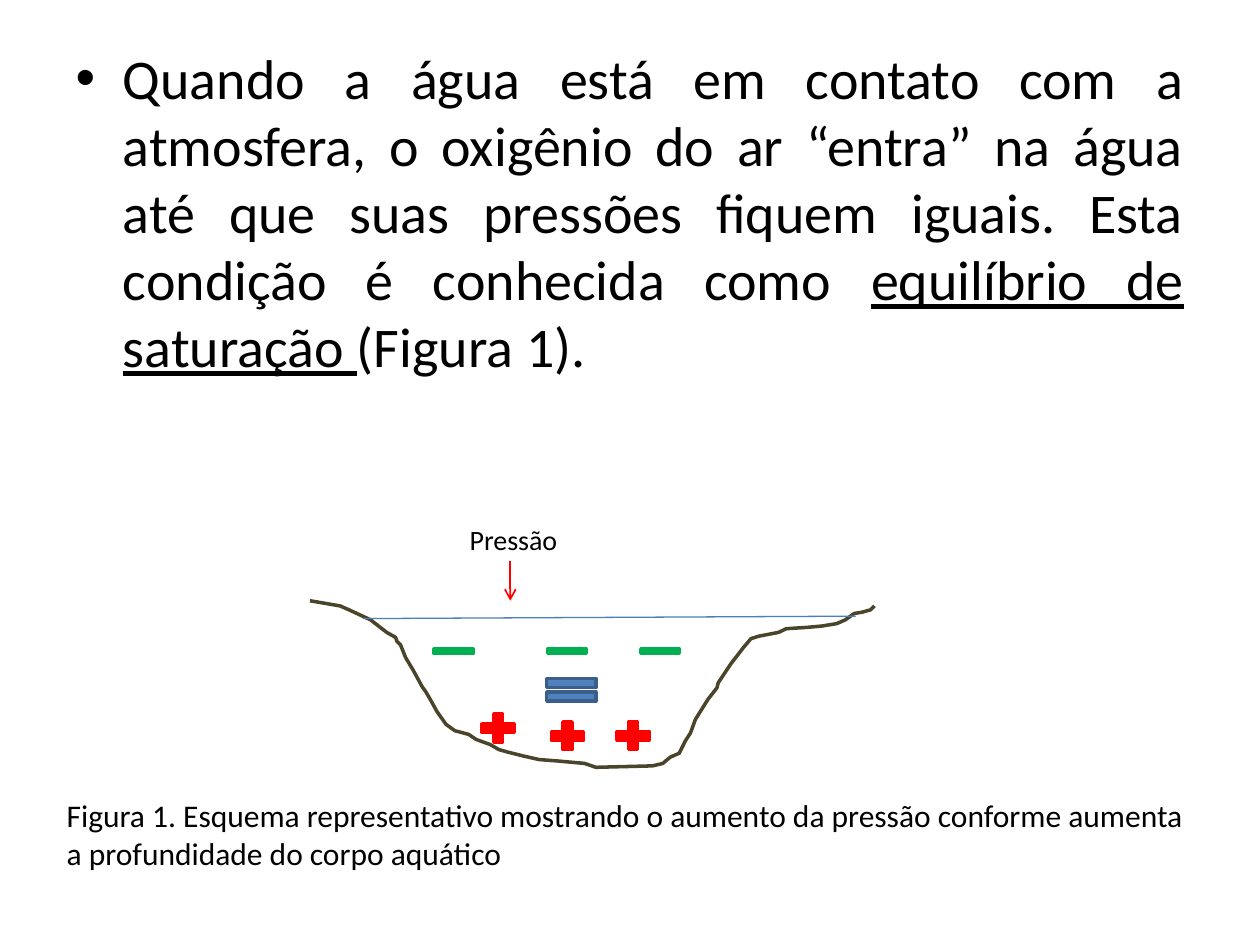
from lxml import etree
from pptx import Presentation
from pptx.dml.color import RGBColor
from pptx.enum import shapes, text
from pptx.oxml import ns
from pptx.util import Pt

BLACK = RGBColor(0x00, 0x00, 0x00)
EARTH = RGBColor(0x4A, 0x45, 0x2A)
WATER = RGBColor(0x4B, 0x7E, 0xBC)
BLUE = RGBColor(0x4F, 0x81, 0xBD)
DARK_BLUE = RGBColor(0x3A, 0x5F, 0x8C)
GREEN = RGBColor(0x00, 0xB0, 0x50)
RED = RGBColor(0xFF, 0x00, 0x00)
FONT = "Calibri"

STATEMENT = [
    ("Quando a água está em contato com a atmosfera, o oxigênio do ar “entra” na água "
     "até que suas pressões fiquem iguais. Esta condição é conhecida como ", False),
    ("equilíbrio de saturação ", True),
    ("(Figura 1).", False),
]
CAPTION = ("Figura 1. Esquema representativo mostrando o aumento da pressão "
           "conforme aumenta a profundidade do corpo aquático")

LAKE_BED = [
    (0, 51), (17.3, 54), (23, 56.5), (34.6, 61.9), (43.9, 69.1), (49, 72), (49.7, 74.2),
    (51.8, 76.3), (54.7, 83.5), (59, 90.7), (64.1, 100.1), (66.2, 103), (69.1, 108),
    (72.7, 114.5), (77.8, 121.7), (82.8, 125.3), (90.7, 127.4), (95, 130.3),
    (103, 133.2), (108, 136.1), (113, 137.5), (121.7, 139.7), (131, 141.8),
    (141.8, 142.6), (157, 144), (163.4, 146.2), (195.8, 145.4), (201.6, 144),
    (205.9, 140.4), (211, 138.2), (214.6, 131), (217.4, 126.7), (220.3, 118.8),
    (227.5, 107.3), (232.6, 100.8), (233.3, 97.9), (240.5, 87.1), (247.7, 77.8),
    (252, 72.7), (256.3, 71.3), (267.8, 69.1), (272.2, 67), (284.4, 66.2),
    (292.3, 65.5), (301, 64.1), (306, 61.9), (311, 58.3), (315.4, 57.6),
    (320.4, 56.2), (322.6, 54),
]
MINUS, EQUAL, PLUS = (shapes.MSO_SHAPE.MATH_MINUS, shapes.MSO_SHAPE.MATH_EQUAL,
                      shapes.MSO_SHAPE.MATH_PLUS)
SIGNS = [
    (EQUAL, (38.2, 22.3), BLUE, DARK_BLUE, [(130.3, 90.7)]),
    (MINUS, (30.2, 11.5), GREEN, GREEN, [(67, 74.2), (131.8, 74.2), (185, 74.2)]),
    (PLUS, (25.2, 21.6), RED, RED, [(95, 113), (134.6, 117.4), (172, 117.4)]),
]


def format_font(paragraph, size):
    """Apply the slide's typeface and colour to a paragraph."""
    paragraph.font.name = FONT
    paragraph.font.size = Pt(size)
    paragraph.font.color.rgb = BLACK


def add_statement(slide, left, top, width, height):
    """Fill the body placeholder with the justified bullet."""
    body = slide.placeholders[1]
    body.left, body.top, body.width, body.height = map(Pt, (left, top, width, height))
    paragraph = body.text_frame.paragraphs[0]
    paragraph.alignment = text.PP_ALIGN.JUSTIFY
    format_font(paragraph, 32)
    for words, underlined in STATEMENT:
        run = paragraph.add_run()
        run.text = words
        if underlined:
            run.font.underline = True


def add_text(container, words, size, left, top, width, height):
    """Add a wrapped text box and return its paragraph."""
    box = container.add_textbox(*map(Pt, (left, top, width, height)))
    box.text_frame.word_wrap = True
    paragraph = box.text_frame.paragraphs[0]
    paragraph.text = words
    format_font(paragraph, size)
    return paragraph


def add_line(container, start, end, color, width, arrow=False):
    """Add a straight connector, with an arrowhead at its end if wanted."""
    line = container.add_connector(shapes.MSO_CONNECTOR.STRAIGHT, *map(Pt, (*start, *end)))
    line.line.color.rgb = color
    line.line.width = Pt(width)
    if arrow:
        etree.SubElement(line.line._get_or_add_ln(), ns.qn("a:tailEnd"), type="arrow")
    etree.SubElement(line._element.spPr, ns.qn("a:effectLst"))


def add_lake_bed(container, left, top):
    """Draw the open outline of the lake bed."""
    points = [(Pt(left + x), Pt(top + y)) for x, y in LAKE_BED]
    builder = container.build_freeform(*points[0])
    builder.add_line_segments(points[1:], close=False)
    bed = builder.convert_to_shape()
    bed.shadow.inherit = False
    bed.fill.background()
    bed.line.color.rgb = EARTH
    bed.line.width = Pt(2)


def add_sign(container, kind, left, top, size, fill, outline):
    """Add one mathematical sign."""
    sign = container.add_shape(kind, *map(Pt, (left, top, *size)))
    sign.shadow.inherit = False
    sign.fill.solid()
    sign.fill.fore_color.rgb = fill
    sign.line.color.rgb = outline
    sign.line.width = Pt(2)


def add_lake_diagram(slide, left, top):
    """Draw the lake section with its pressure label and signs as a group."""
    container = slide.shapes.add_group_shape().shapes
    add_lake_bed(container, left, top)
    add_line(container, (left + 30.2, top + 61.2), (left + 311.8, top + 59.8), WATER, 0.75)
    label = add_text(container, "Pressão", 16, left + 84.2, top, 101.5, 21.6)
    label.line_spacing = 1.15
    label.space_after = Pt(10)
    add_line(container, (left + 114.5, top + 28), (left + 114.5, top + 51), RED, 1, arrow=True)
    for kind, size, fill, outline, places in SIGNS:
        for x, y in places:
            add_sign(container, kind, left + x, top + y, size, fill, outline)


def main():
    """Build the slide and save it."""
    presentation = Presentation()
    presentation.slide_width, presentation.slide_height = Pt(720), Pt(540)
    slide = presentation.slides.add_slide(presentation.slide_layouts[1])
    title = slide.shapes.title._element
    title.getparent().remove(title)
    add_statement(slide, 36, 21, 648, 211.7)
    add_lake_diagram(slide, 177.1, 292.3)
    add_text(slide.shapes, CAPTION, 18, 31, 451.4, 663, 51)
    presentation.save("out.pptx")


if __name__ == "__main__":
    main()
